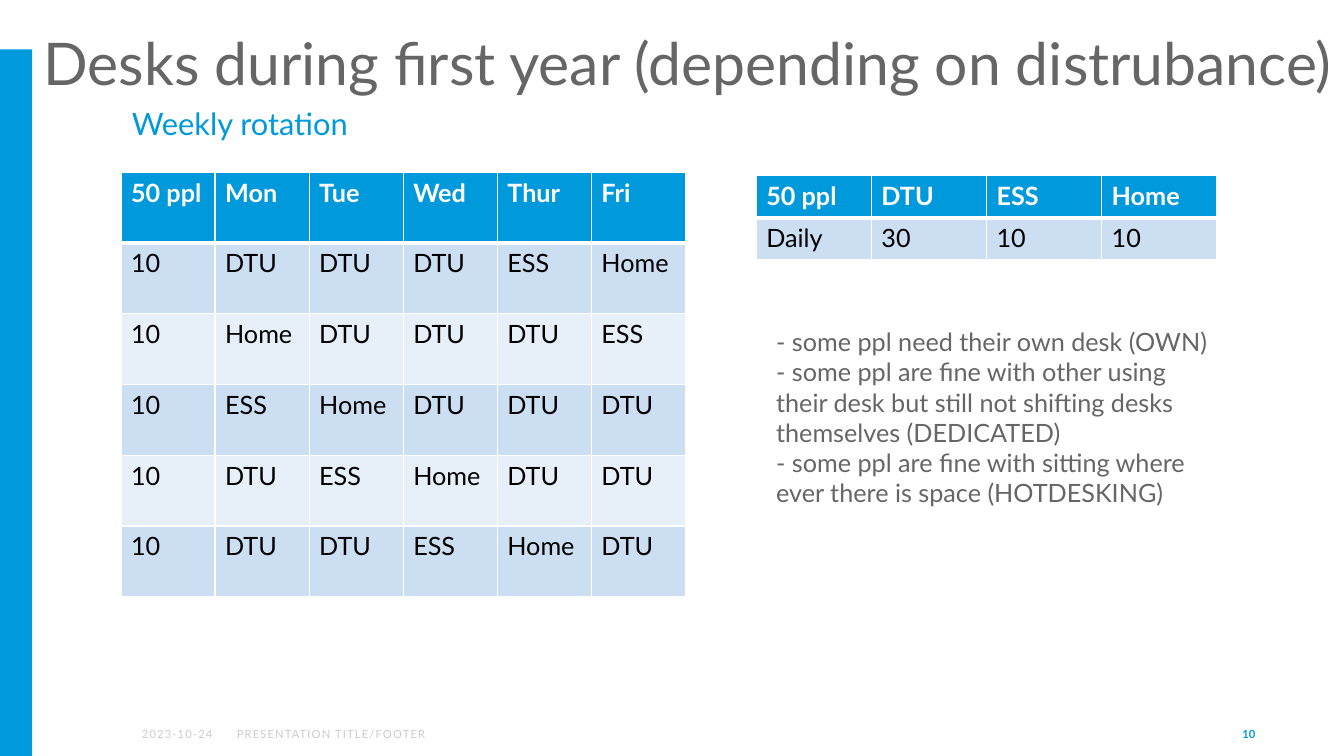
from dataclasses import dataclass

from lxml import etree
from pptx import Presentation
from pptx.dml.color import RGBColor
from pptx.enum.shapes import MSO_SHAPE
from pptx.enum.text import MSO_ANCHOR, MSO_AUTO_SIZE, PP_ALIGN
from pptx.oxml.ns import qn
from pptx.util import Inches, Pt

RECT = MSO_SHAPE.RECTANGLE
TOP, MIDDLE = MSO_ANCHOR.TOP, MSO_ANCHOR.MIDDLE
LEFT, RIGHT = PP_ALIGN.LEFT, PP_ALIGN.RIGHT
FIXED = MSO_AUTO_SIZE.NONE


@dataclass(frozen=True)
class Theme:
    font: str = "Lato"
    blue: str = "0099DC"
    gray: str = "666666"
    pale: str = "CCCCCC"
    black: str = "000000"
    white: str = "FFFFFF"
    bands: tuple = ("CCDEF2", "E7EFF9")
    title: int = 42
    sub: int = 22
    body: int = 18
    foot: int = 8


def apply(item, values):
    for name, value in values.items():
        setattr(item, name, value)


def paint(fill, color):
    fill.solid()
    fill.fore_color.rgb = RGBColor.from_string(color)


class Page:
    def __init__(self, deck, theme):
        self.theme = theme
        self.slide = deck.slides.add_slide(deck.slide_layouts[5])
        self.shapes = self.slide.shapes

    def label(self, para, text, size, color, bold=False, align=LEFT, track=0):
        """Add a styled run to a paragraph and align it."""
        para.alignment = align
        run = para.add_run()
        run.text = text
        apply(run.font, dict(name=self.theme.font, size=Pt(size), bold=bold))
        run.font.color.rgb = RGBColor.from_string(color)
        if track:
            run._r.get_or_add_rPr().set("spc", str(track))

    def bar(self, box, color):
        bar = self.shapes.add_shape(RECT, *map(Inches, box))
        bar.shadow.inherit = False
        paint(bar.fill, color)
        bar.line.fill.background()

    def title(self, box, text):
        title = self.shapes.title
        sides = map(Inches, box)
        apply(title, dict(zip(("left", "top", "width", "height"), sides)))
        frame = title.text_frame
        apply(frame, dict(auto_size=FIXED, word_wrap=True,
                          vertical_anchor=TOP, margin_bottom=Inches(0.02)))
        para = frame.paragraphs[0]
        para.line_spacing = 0.9
        self.label(para, text, self.theme.title, self.theme.gray)

    def text(self, box, lines, size, color, anchor=TOP, inset=0.05, **style):
        frame = self.shapes.add_textbox(*map(Inches, box)).text_frame
        apply(frame, dict(word_wrap=True, vertical_anchor=anchor,
                          margin_top=Inches(inset)))
        for i, line in enumerate(lines):
            para = frame.add_paragraph() if i else frame.paragraphs[0]
            self.label(para, line, size, color, **style)

    def edge(self, cell, base):
        """Draw white cell borders, with the given width at the bottom."""
        props = cell._tc.get_or_add_tcPr()
        for i, side in enumerate("LRTB"):
            line = etree.Element(qn("a:ln" + side))
            line.set("w", str(Pt(base if side == "B" else 1)))
            fill = etree.SubElement(line, qn("a:solidFill"))
            etree.SubElement(fill, qn("a:srgbClr")).set("val", self.theme.white)
            props.insert(i, line)

    def table(self, box, rows):
        theme = self.theme
        x, y, width, height = map(Inches, box)
        count = len(rows[0])
        table = self.shapes.add_table(
            len(rows), count, x, y, width, height).table
        for col in table.columns:
            col.width = width // count
        for i, row in enumerate(rows):
            table.rows[i].height = height // len(rows)
            head = i == 0
            for j, text in enumerate(row):
                cell = table.cell(i, j)
                paint(cell.fill, theme.blue if head else theme.bands[(i - 1) % 2])
                self.edge(cell, 3 if head else 1)
                self.label(cell.text_frame.paragraphs[0], text, theme.body,
                           theme.white if head else theme.black, bold=head)


def main():
    deck = Presentation()
    apply(deck, dict(slide_width=Inches(13.33), slide_height=Inches(7.5)))
    theme = Theme()
    page = Page(deck, theme)

    page.bar((0, 0.49, 0.32, 7.01), theme.blue)
    page.title((0.33, 0.29, 13, 0.72),
               "Desks during first year (depending on distrubance)")
    page.text((1.21, 1.02, 10.24, 0.55), ["Weekly rotation"],
              theme.sub, theme.blue, inset=0.02)

    page.table((1.2, 1.71, 5.6, 4.21), [
        ("50 ppl", "Mon", "Tue", "Wed", "Thur", "Fri"),
        ("10", "DTU", "DTU", "DTU", "ESS", "Home"),
        ("10", "Home", "DTU", "DTU", "DTU", "ESS"),
        ("10", "ESS", "Home", "DTU", "DTU", "DTU"),
        ("10", "DTU", "ESS", "Home", "DTU", "DTU"),
        ("10", "DTU", "DTU", "ESS", "Home", "DTU"),
    ])
    page.table((7.5, 1.74, 4.57, 0.84), [
        ("50 ppl", "DTU", "ESS", "Home"),
        ("Daily", "30", "10", "10"),
    ])
    page.text((7.6, 3.19, 4.6, 1.92), [
        "- some ppl need their own desk (OWN)",
        "- some ppl are fine with other using their desk but still "
        "not shifting desks themselves (DEDICATED)",
        "- some ppl are fine with sitting where ever there is space "
        "(HOTDESKING)",
    ], theme.body, theme.gray)

    for x, width, text, color, style in (
        (1.31, 0.91, "2023-10-24", theme.pale, dict(track=80)),
        (2.25, 4.72, "PRESENTATION TITLE/FOOTER", theme.pale, dict(track=80)),
        (9.55, 3, "10", theme.blue, dict(bold=True, align=RIGHT)),
    ):
        page.text((x, 7.08, width, 0.4), [text], theme.foot, color,
                  anchor=MIDDLE, **style)

    deck.save("out.pptx")


if __name__ == "__main__":
    main()
